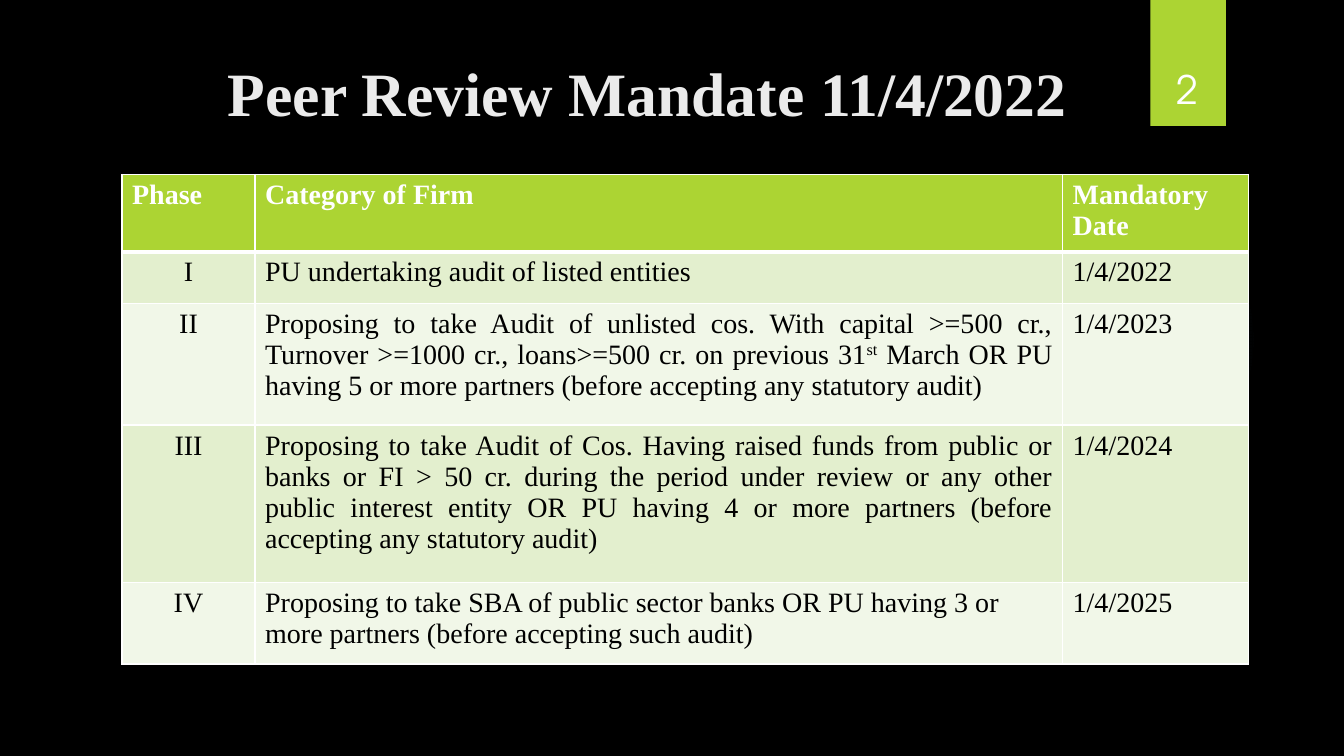
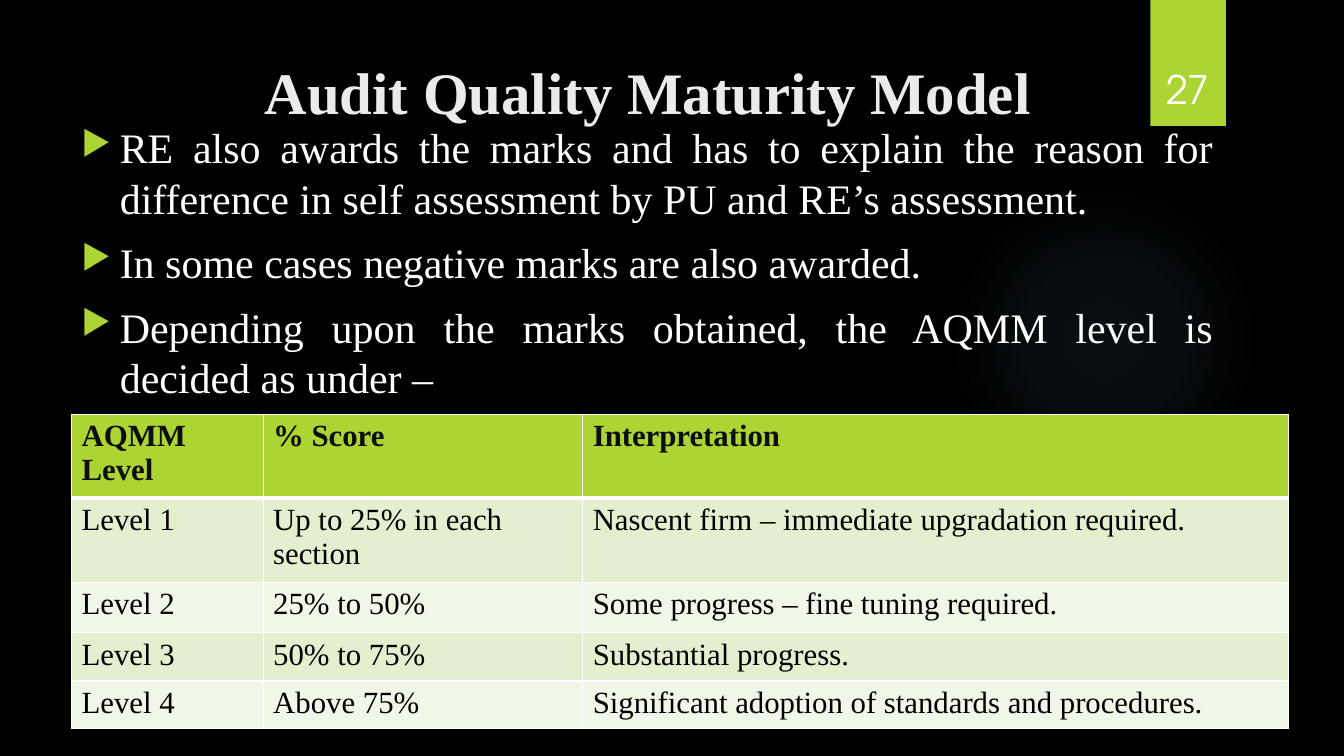
import pptx
import pptx.util
import pptx.dml.color
import pptx.enum.shapes
import pptx.enum.text
import pptx.oxml
import pptx.oxml.ns

Inches = pptx.util.Inches
Pt = pptx.util.Pt
RGBColor = pptx.dml.color.RGBColor
Align = pptx.enum.text.PP_ALIGN
Anchor = pptx.enum.text.MSO_ANCHOR
Shape = pptx.enum.shapes.MSO_SHAPE

BLACK = RGBColor(0x00, 0x00, 0x00)
WHITE = RGBColor(0xFF, 0xFF, 0xFF)
LIME = RGBColor(0xAC, 0xD4, 0x33)
TITLE_GREY = RGBColor(0xEB, 0xEB, 0xEB)
NEAR_BLACK = RGBColor(0x0D, 0x0D, 0x0D)
GLOW_BLUE = RGBColor(0x7A, 0xC4, 0xF0)
ROW_FILLS = (RGBColor(0xE3, 0xEF, 0xCE), RGBColor(0xF1, 0xF7, 0xE8))

SERIF = "Times New Roman"
SANS = "TeX Gyre Adventor"
LINE_PITCH = 1.2

PHASE_ROWS = [
    ["Phase", "Category of Firm", "Mandatory Date"],
    ["I", "PU undertaking audit of listed entities", "1/4/2022"],
    ["II", "Proposing to take Audit of unlisted cos. With capital >=500 cr., "
     "Turnover >=1000 cr., loans>=500 cr. on previous 31^st^ March OR PU "
     "having 5 or more partners (before accepting any statutory audit)", "1/4/2023"],
    ["III", "Proposing to take Audit of Cos. Having raised funds from public or "
     "banks or FI > 50 cr. during the period under review or any other public "
     "interest entity OR PU having 4 or more partners (before accepting any "
     "statutory audit)", "1/4/2024"],
    ["IV", "Proposing to take SBA of public sector banks OR PU having 3 or more "
     "partners (before accepting such audit)", "1/4/2025"],
]
PHASE_ALIGNMENTS = {(row, 0): Align.CENTER for row in range(1, 5)}
PHASE_ALIGNMENTS.update({(row, 1): Align.JUSTIFY for row in (2, 3)})

LEVEL_ROWS = [
    ["AQMM Level", "% Score", "Interpretation"],
    ["Level 1", "Up to 25% in each section", "Nascent firm – immediate upgradation required."],
    ["Level 2", "25% to 50%", "Some progress – fine tuning required."],
    ["Level 3", "50% to 75%", "Substantial progress."],
    ["Level 4", "Above 75%", "Significant adoption of standards and procedures."],
]

AQMM_POINTS = [
    "RE also awards the marks and has to explain the reason for difference in "
    "self assessment by PU and RE’s assessment.",
    "In some cases negative marks are also awarded.",
    "Depending upon the marks obtained, the AQMM level is decided as under –",
]


def xml_element(markup):
    namespace = pptx.oxml.ns.nsdecls("a")
    return pptx.oxml.parse_xml(markup.replace("NS", namespace, 1))


def style_paragraph(paragraph, name, size, color, bold=False, alignment=None):
    paragraph.alignment = alignment
    for run in paragraph.runs:
        font = run.font
        font.name = name
        font.size = Pt(size)
        font.bold = bold
        font.color.rgb = color


def add_text_frame(slide, left, top, width, height, anchor=Anchor.TOP):
    box = slide.shapes.add_textbox(Inches(left), Inches(top), Inches(width), Inches(height))
    text_frame = box.text_frame
    text_frame.word_wrap = True
    text_frame.vertical_anchor = anchor
    return text_frame


def add_plain_shape(slide, kind, left, top, width, height):
    shape = slide.shapes.add_shape(kind, Inches(left), Inches(top), Inches(width), Inches(height))
    shape.shadow.inherit = False
    shape.line.fill.background()
    return shape


def add_glow(slide):
    glow = add_plain_shape(slide, Shape.OVAL, 9.41, 1.83, 3.08, 3.08)
    stops = "".join(
        f'<a:gs pos="{position}000"><a:srgbClr val="{GLOW_BLUE}">'
        f'<a:alpha val="{opacity}000"/></a:srgbClr></a:gs>'
        for position, opacity in ((0, 7), (36, 6), (69, 0), (100, 0)))
    gradient = xml_element(
        f'<a:gradFill NS rotWithShape="1"><a:gsLst>{stops}</a:gsLst><a:path path="circle">'
        '<a:fillToRect l="50000" t="50000" r="50000" b="50000"/></a:path></a:gradFill>')
    glow.element.spPr.find(pptx.oxml.ns.qn("a:prstGeom")).addnext(gradient)


def add_base_slide(presentation, title, title_size, number):
    slide = presentation.slides.add_slide(presentation.slide_layouts[6])
    slide.background.fill.solid()
    slide.background.fill.fore_color.rgb = BLACK
    add_glow(slide)
    tab = add_plain_shape(slide, Shape.RECTANGLE, 11.41, 0, 0.75, 1.25)
    tab.fill.solid()
    tab.fill.fore_color.rgb = LIME

    heading = add_text_frame(slide, 0.71, 0.5, 11.43, 0.76).paragraphs[0]
    heading.text = title
    heading.line_spacing = Pt(LINE_PITCH * title_size)
    style_paragraph(heading, SERIF, title_size, TITLE_GREY, True, Align.CENTER)

    label = add_text_frame(slide, 11.32, 0.32, 0.92, 0.84, Anchor.BOTTOM).paragraphs[0]
    label.text = number
    style_paragraph(label, SANS, 28, WHITE, alignment=Align.CENTER)
    return slide


def add_bullets(slide, points, size):
    text_frame = add_text_frame(slide, 0.71, 1.16, 11.43, 5.89)
    for index, point in enumerate(points):
        paragraph = text_frame.add_paragraph() if index else text_frame.paragraphs[0]
        paragraph.text = point
        properties = paragraph._p.get_or_add_pPr()
        properties.set("marL", str(Inches(0.38)))
        properties.set("indent", str(-Inches(0.38)))
        for markup in (f'<a:buClr NS><a:srgbClr val="{LIME}"/></a:buClr>',
                       '<a:buSzPct NS val="80000"/>', '<a:buChar NS char="▶"/>'):
            properties.append(xml_element(markup))
        paragraph.line_spacing = Pt(LINE_PITCH * size)
        paragraph.space_before = Pt(10 if index else 0)
        style_paragraph(paragraph, SERIF, size, WHITE, alignment=Align.JUSTIFY)


def set_borders(cell, top, bottom):
    properties = cell._tc.get_or_add_tcPr()
    for side, width in (("L", 1), ("R", 1), ("T", top), ("B", bottom)):
        properties.append(xml_element(
            f'<a:ln{side} NS w="{Pt(width)}"><a:solidFill><a:srgbClr val="{WHITE}"/>'
            f'</a:solidFill></a:ln{side}>'))


def set_cell_text(paragraph, text):
    for index, piece in enumerate(text.split("^")):
        run = paragraph.add_run()
        run.text = piece
        if index % 2:
            run._r.get_or_add_rPr().set("baseline", "30000")


def add_banded_table(slide, left, top, widths, heights, rows, size, header_color, alignments):
    table = slide.shapes.add_table(
        len(rows), len(widths), Inches(left), Inches(top),
        Inches(sum(widths)), Inches(sum(heights))).table
    for column, width in zip(table.columns, widths):
        column.width = Inches(width)
    for row, height in zip(table.rows, heights):
        row.height = Inches(height)
    for row_index, texts in enumerate(rows):
        is_header = row_index == 0
        for column_index, text in enumerate(texts):
            cell = table.cell(row_index, column_index)
            set_borders(cell, 3 if row_index == 1 else 1, 3 if is_header else 1)
            cell.fill.solid()
            cell.fill.fore_color.rgb = LIME if is_header else ROW_FILLS[(row_index - 1) % 2]
            paragraph = cell.text_frame.paragraphs[0]
            set_cell_text(paragraph, text)
            style_paragraph(paragraph, SERIF, size, header_color if is_header else BLACK,
                            is_header, alignments.get((row_index, column_index), Align.LEFT))


def main():
    presentation = pptx.Presentation()
    presentation.slide_width = Inches(13.33)
    presentation.slide_height = Inches(7.5)

    mandate = add_base_slide(presentation, "Peer Review Mandate 11/4/2022", 44, "2")
    add_banded_table(mandate, 1.21, 1.73, [1.32, 8.01, 1.84], [0.57, 0.51, 1.21, 1.56, 0.81],
                     PHASE_ROWS, 20, WHITE, PHASE_ALIGNMENTS)

    maturity = add_base_slide(presentation, "Audit Quality Maturity Model", 42, "27")
    add_bullets(maturity, AQMM_POINTS, 30)
    add_banded_table(maturity, 0.71, 4.11, [1.9, 3.17, 7], [0.57, 0.53, 0.5, 0.48, 0.45],
                     LEVEL_ROWS, 22, NEAR_BLACK, {})

    presentation.save("out.pptx")


if __name__ == "__main__":
    main()
